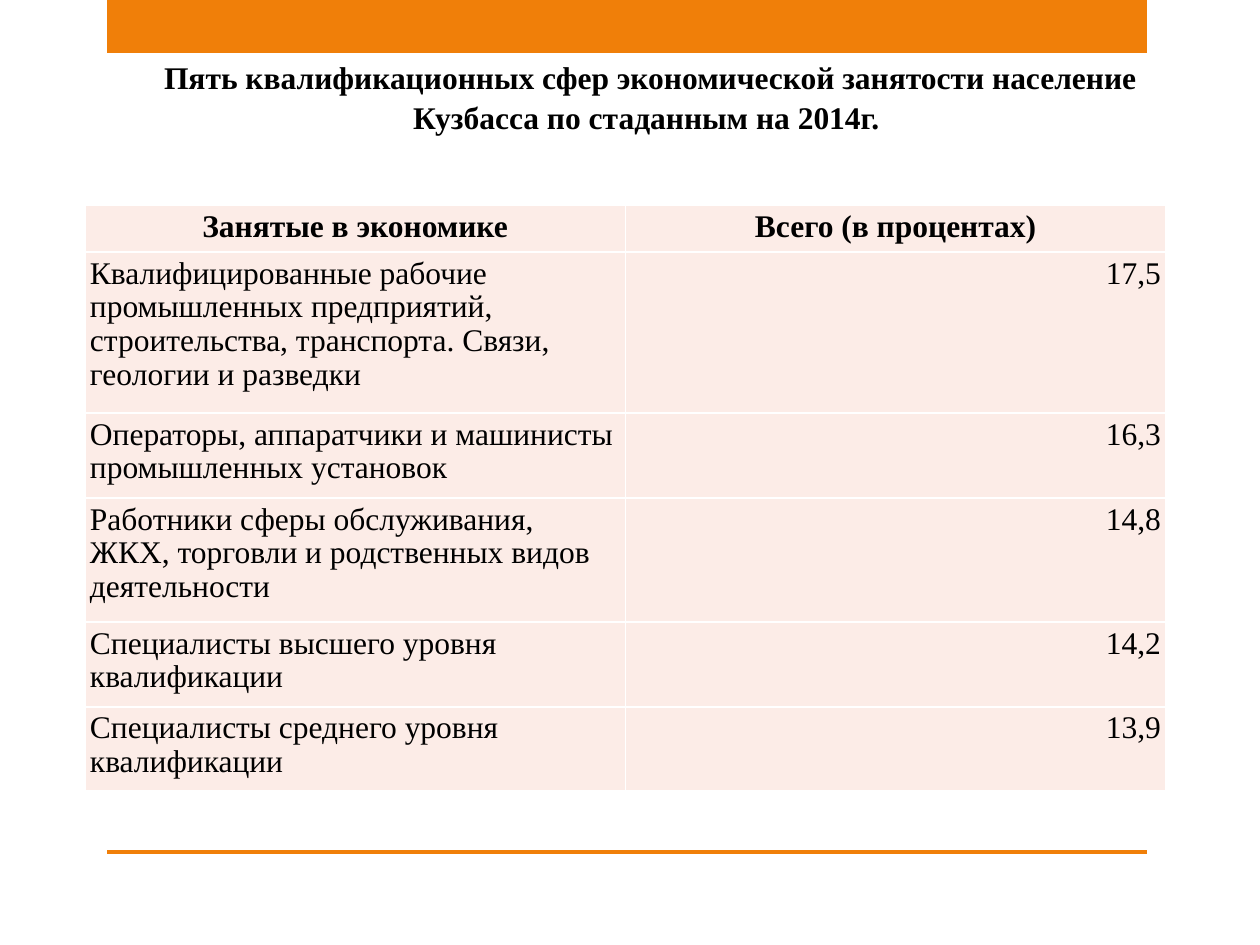
from lxml.etree import SubElement
from pptx import Presentation
from pptx.dml.color import RGBColor
from pptx.enum.shapes import MSO_SHAPE
from pptx.enum.text import MSO_ANCHOR, MSO_AUTO_SIZE, PP_ALIGN as Align
from pptx.oxml.ns import qn
from pptx.util import Emu, Inches, Pt

COLORS = {"accent": "F07F09", "cell": "FCECE7", "border": "FFFFFF", "text": "000000"}
FONT = "Times New Roman"
TITLE = ("Пять квалификационных сфер экономической занятости население "
         "Кузбасса по стаданным на 2014г. ")
HEADERS = ("Занятые в экономике", "Всего (в процентах)")
OCCUPATIONS = [
    ("Квалифицированные рабочие промышленных предприятий, строительства, "
     "транспорта. Связи, геологии и разведки", "17,5"),
    ("Операторы, аппаратчики и машинисты промышленных установок", "16,3"),
    ("Работники сферы обслуживания, ЖКХ, торговли и родственных видов деятельности", "14,8"),
    ("Специалисты высшего уровня квалификации", "14,2"),
    ("Специалисты среднего уровня квалификации", "13,9"),
]
ROW_HEIGHTS = (47, 161, 85, 124, 85, 84)


def px(length):
    """Turn px, 126 to the inch, into EMU."""
    return Emu(round(length * 914400 / 126))


def rgb(name):
    return RGBColor.from_string(COLORS[name])


def write(frame, text, align=Align.LEFT, bold=False, spacing=1.0):
    frame.word_wrap = True
    paragraph = frame.paragraphs[0]
    paragraph.alignment = align
    paragraph.line_spacing = spacing
    paragraph.space_before = Pt(0)
    run = paragraph.add_run()
    run.text = text
    run.font.name = FONT
    run.font.size = Pt(18)
    run.font.bold = bold
    run.font.color.rgb = rgb("text")


class SlideBuilder:
    def __init__(self, slide):
        self.slide = slide

    def bar(self, left, top, width, height):
        shape = self.slide.shapes.add_shape(
            MSO_SHAPE.RECTANGLE, px(left), px(top), px(width), px(height))
        shape.shadow.inherit = False
        shape.fill.solid()
        shape.fill.fore_color.rgb = rgb("accent")
        shape.line.fill.background()

    def title(self, text, left, top, width, height):
        shape = self.slide.shapes.title
        shape.left, shape.top, shape.width, shape.height = map(px, (left, top, width, height))
        frame = shape.text_frame
        frame.auto_size = MSO_AUTO_SIZE.SHAPE_TO_FIT_TEXT
        frame.vertical_anchor = MSO_ANCHOR.TOP
        write(frame, text, align=Align.CENTER, bold=True, spacing=1.07)

    def table(self, rows, left, top, width, row_heights):
        table = self.slide.shapes.add_table(
            len(rows), len(rows[0]), px(left), px(top), px(width), px(sum(row_heights))).table
        for column in table.columns:
            column.width = px(width / len(rows[0]))
        for r, (values, height) in enumerate(zip(rows, row_heights)):
            table.rows[r].height = px(height)
            for c, value in enumerate(values):
                align = Align.CENTER if r == 0 else (Align.LEFT, Align.RIGHT)[c]
                self.cell(table.cell(r, c), value, align, bold=r == 0)

    def cell(self, cell, text, align, bold):
        cell.margin_left = cell.margin_right = Inches(0.04)
        cell.margin_top = cell.margin_bottom = Inches(0.04)
        write(cell.text_frame, text, align=align, bold=bold, spacing=0.97)
        properties = cell._tc.get_or_add_tcPr()
        for side in ("a:lnL", "a:lnR", "a:lnT", "a:lnB"):
            line = SubElement(properties, qn(side), w=str(Pt(1)))
            fill = SubElement(line, qn("a:solidFill"))
            SubElement(fill, qn("a:srgbClr"), val=COLORS["border"])
        cell.fill.solid()
        cell.fill.fore_color.rgb = rgb("cell")


def main():
    presentation = Presentation()
    presentation.slide_width, presentation.slide_height = px(1260), px(945)
    title_only = presentation.slide_layouts[5]
    builder = SlideBuilder(presentation.slides.add_slide(title_only))
    builder.bar(107, 0, 1040, 53)
    builder.bar(107, 850, 1040, 4)
    builder.title(TITLE, 115, 49, 1071, 89)
    builder.table([HEADERS, *OCCUPATIONS], 85, 205, 1081, ROW_HEIGHTS)
    presentation.save("out.pptx")


if __name__ == "__main__":
    main()
